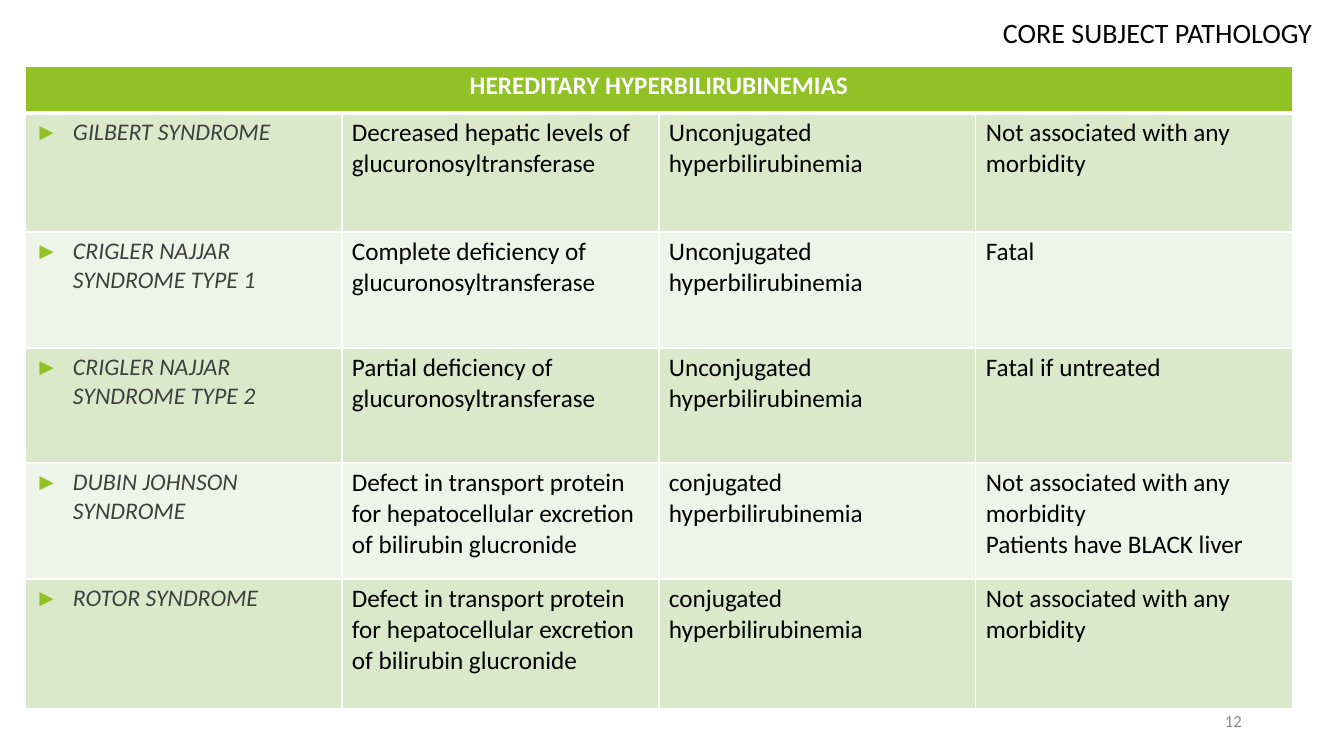
from dataclasses import dataclass

from lxml import etree
from pptx import Presentation
from pptx.dml.color import RGBColor
from pptx.enum.text import MSO_ANCHOR, PP_ALIGN
from pptx.oxml.ns import qn
from pptx.util import Emu, Pt

LEFT, CENTER, RIGHT = PP_ALIGN.LEFT, PP_ALIGN.CENTER, PP_ALIGN.RIGHT
TOP, MIDDLE = MSO_ANCHOR.TOP, MSO_ANCHOR.MIDDLE
EMU_PER_PX = 914400 / 100.8
FONT = "Calibri"
GREEN, WHITE, BLACK = "90C226", "FFFFFF", "000000"
BAND_FILLS = ("DBE9CB", "EEF4E7")
COLUMN_WIDTH, COLUMN_COUNT = 317, 4
ROW_HEIGHTS = (47, 119, 116, 115, 116, 130)
HANGING_INDENT = 38


@dataclass(frozen=True)
class Syndrome:
    """One row of the table."""
    name: str
    defect: str
    bilirubin: str
    outcome: str


@dataclass(frozen=True)
class Label:
    """A right-aligned text box, measured in px."""
    text: str
    left: int
    top: int
    width: int
    height: int
    size: int
    color: str
    margins: tuple[int, int]
    anchor: MSO_ANCHOR


UNCONJUGATED = "Unconjugated hyperbilirubinemia"
CONJUGATED = "conjugated hyperbilirubinemia"
TRANSPORT = "Defect in transport protein for hepatocellular excretion of bilirubin glucronide"
HARMLESS = "Not associated with any morbidity"
SYNDROMES = (
    Syndrome("GILBERT SYNDROME", "Decreased hepatic levels of glucuronosyltransferase",
             UNCONJUGATED, HARMLESS),
    Syndrome("CRIGLER NAJJAR SYNDROME TYPE 1", "Complete deficiency of glucuronosyltransferase",
             UNCONJUGATED, "Fatal"),
    Syndrome("CRIGLER NAJJAR SYNDROME TYPE 2", "Partial deficiency of glucuronosyltransferase",
             UNCONJUGATED, "Fatal if untreated"),
    Syndrome("DUBIN JOHNSON SYNDROME", TRANSPORT, CONJUGATED,
             HARMLESS + "\nPatients have BLACK liver"),
    Syndrome("ROTOR SYNDROME", TRANSPORT, CONJUGATED, HARMLESS),
)
LABELS = (
    Label("12", 950, 701, 302, 40, 12, "888888", (10, 5), MIDDLE),
    Label("CORE SUBJECT PATHOLOGY", 884, 15, 428, 35, 20, BLACK, (0, 1), TOP),
)


def px(length: int) -> Emu:
    """Turn px into EMU."""
    return Emu(round(length * EMU_PER_PX))


def rgb(color: str) -> RGBColor:
    """Turn a hex string into a colour."""
    return RGBColor.from_string(color)


def add_bullet(para) -> None:
    """Give a paragraph a green arrowhead bullet with a hanging indent."""
    properties = para._p.get_or_add_pPr()
    properties.set("marL", str(px(HANGING_INDENT)))
    properties.set("indent", str(-px(HANGING_INDENT)))
    bullet_color = etree.SubElement(properties, qn("a:buClr"))
    etree.SubElement(bullet_color, qn("a:srgbClr"), val=GREEN)
    etree.SubElement(properties, qn("a:buFont"), typeface="Arial")
    etree.SubElement(properties, qn("a:buChar"), char="►")


def write(frame, text: str, *, size: int = 18, color: str = BLACK, bold: bool = False,
          italic: bool = False, align: PP_ALIGN = LEFT, bullet: bool = False) -> None:
    """Write one paragraph for each line of the text."""
    frame.word_wrap = True
    for index, line in enumerate(text.split("\n")):
        para = frame.add_paragraph() if index else frame.paragraphs[0]
        para.alignment = align
        if bullet:
            add_bullet(para)
        span = para.add_run()
        span.text = line
        font = span.font
        font.name, font.size, font.bold, font.italic = FONT, Pt(size), bold, italic
        font.color.rgb = rgb(color)


def style_cell(cell, fill: str, top: int = 1, bottom: int = 1) -> None:
    """Set the margins, white borders and fill of a cell."""
    cell.margin_left = cell.margin_right = px(10)
    cell.margin_top = cell.margin_bottom = px(5)
    properties = cell._tc.get_or_add_tcPr()
    for side, width in (("L", 1), ("R", 1), ("T", top), ("B", bottom)):
        border = etree.SubElement(properties, qn(f"a:ln{side}"), w=str(Pt(width)))
        solid = etree.SubElement(border, qn("a:solidFill"))
        etree.SubElement(solid, qn("a:srgbClr"), val=WHITE)
    cell.fill.solid()
    cell.fill.fore_color.rgb = rgb(fill)


def add_label(page, label: Label) -> None:
    """Add a text box for a label."""
    box = page.shapes.add_textbox(px(label.left), px(label.top),
                                  px(label.width), px(label.height))
    frame = box.text_frame
    across, down = label.margins
    frame.margin_left = frame.margin_right = px(across)
    frame.margin_top = frame.margin_bottom = px(down)
    frame.vertical_anchor = label.anchor
    write(frame, label.text, size=label.size, color=label.color, align=RIGHT)


def add_syndrome_table(page) -> None:
    """Add the table with its merged heading and one row for each syndrome."""
    table = page.shapes.add_table(len(ROW_HEIGHTS), COLUMN_COUNT, px(25), px(66),
                                  px(COLUMN_WIDTH * COLUMN_COUNT), px(sum(ROW_HEIGHTS))).table
    for column in table.columns:
        column.width = px(COLUMN_WIDTH)
    for row, height in zip(table.rows, ROW_HEIGHTS):
        row.height = px(height)
    for cell in table.rows[0].cells:
        style_cell(cell, GREEN, bottom=3)
    heading = table.cell(0, 0)
    heading.merge(table.cell(0, COLUMN_COUNT - 1))
    write(heading.text_frame, "HEREDITARY HYPERBILIRUBINEMIAS",
          color=WHITE, bold=True, align=CENTER)
    for index, syndrome in enumerate(SYNDROMES):
        cells = list(table.rows[index + 1].cells)
        for cell in cells:
            style_cell(cell, BAND_FILLS[index % 2], top=1 if index else 3)
        write(cells[0].text_frame, syndrome.name, size=17, color="3F3F3F",
              italic=True, bullet=True)
        details = (syndrome.defect, syndrome.bilirubin, syndrome.outcome)
        for cell, detail in zip(cells[1:], details):
            write(cell.text_frame, detail)


def main() -> None:
    """Build the slide and save the deck."""
    deck = Presentation()
    deck.slide_width, deck.slide_height = px(1344), px(756)
    page = deck.slides.add_slide(deck.slide_layouts[6])
    for label in LABELS:
        add_label(page, label)
    add_syndrome_table(page)
    deck.save("out.pptx")


if __name__ == "__main__":
    main()
